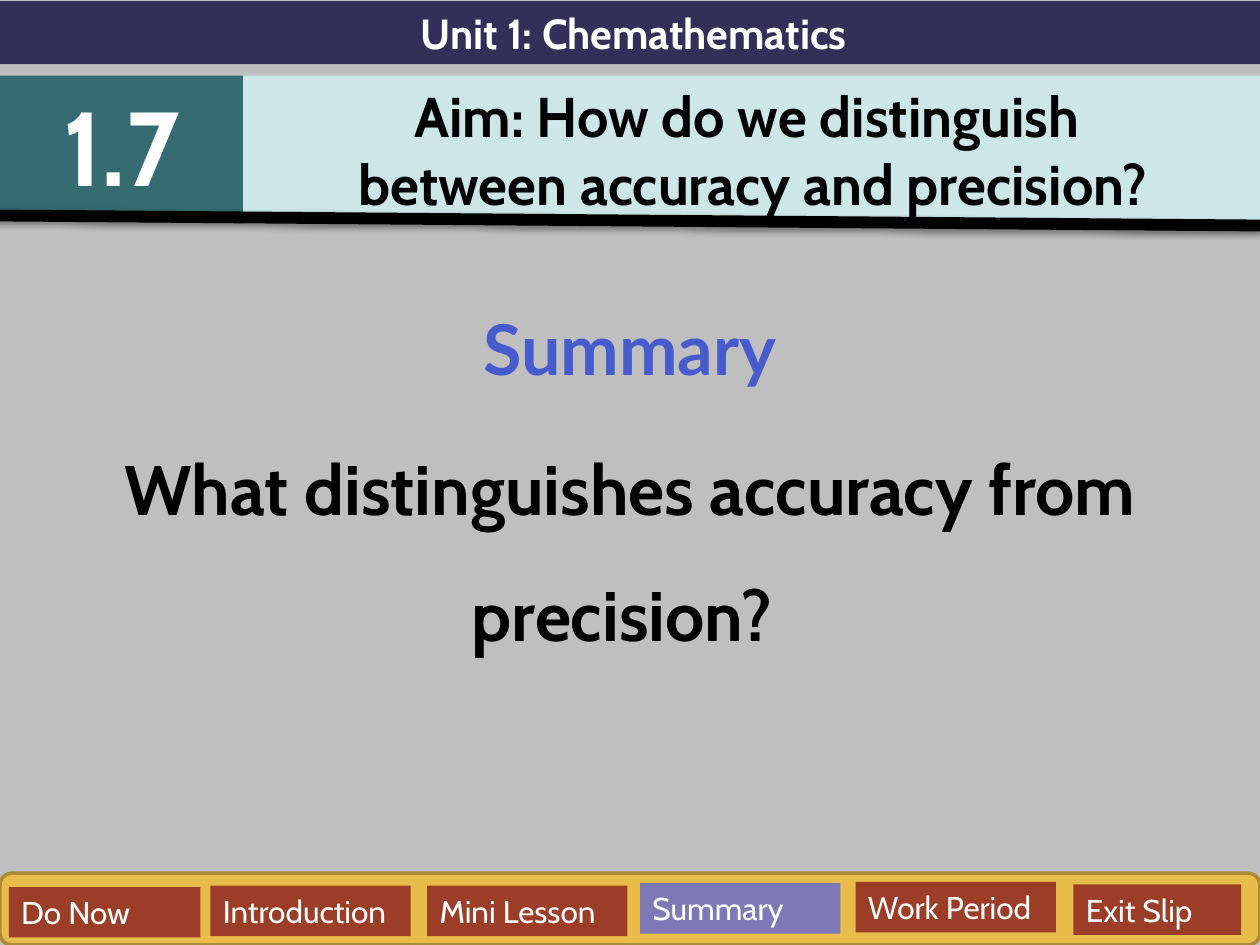
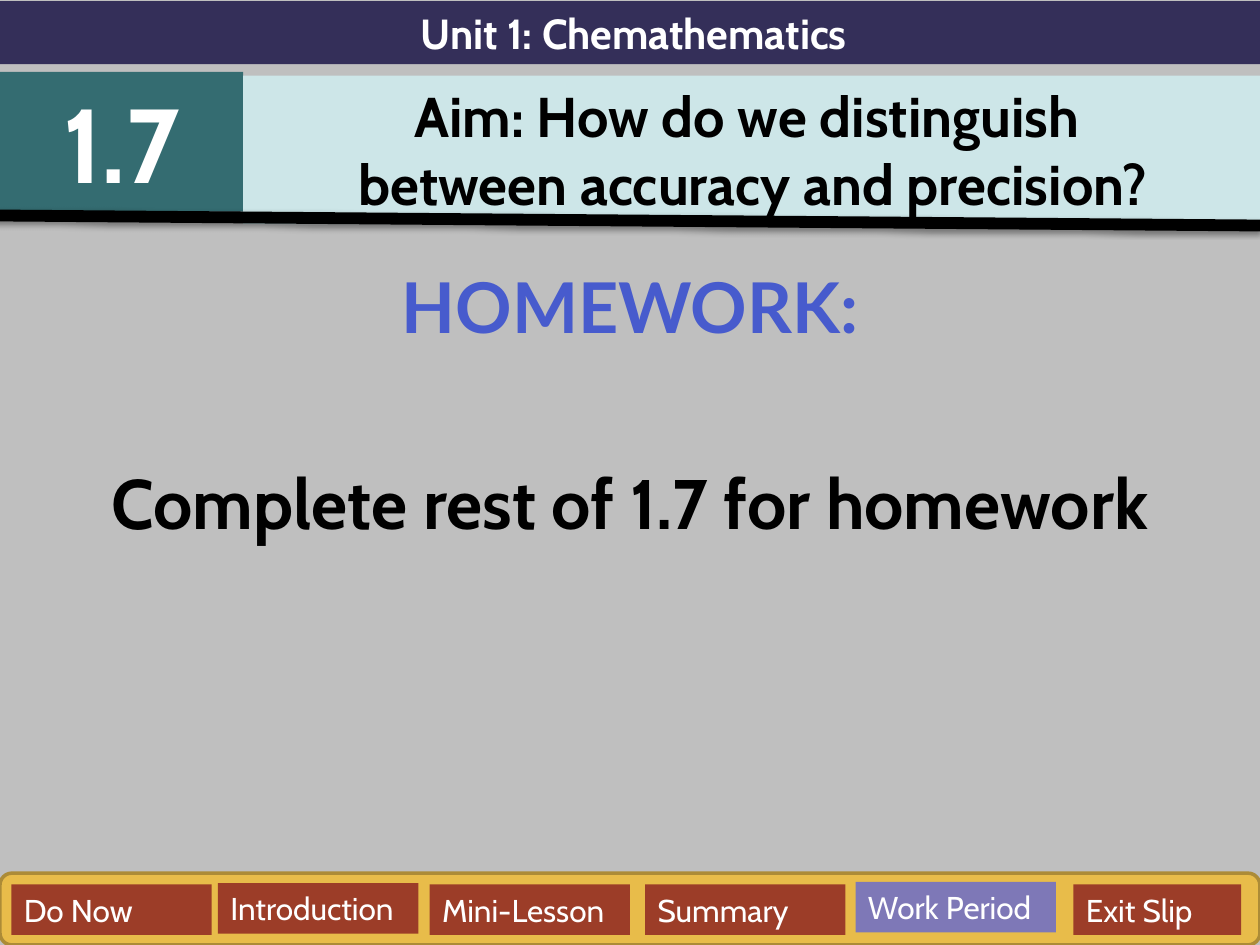
import pptx
import pptx.dml.color
import pptx.enum.shapes
import pptx.enum.text
import pptx.oxml
import pptx.oxml.ns
import pptx.util
from pptx.util import Inches

SHAPE = pptx.enum.shapes.MSO_SHAPE
ALIGN = pptx.enum.text.PP_ALIGN
COLORS = dict(page="BFBFBF", unit="342F59", lesson="346C71", aim="CDE6E8",
              bar="E8BC4A", edge="AC8B37", tab="9C3D28", now="7E78B7",
              head="475BCD", white="FFFFFF", black="000000")

UNIT = dict(name="Cabin", size=24, bold=True, color="white")
LESSON = UNIT | dict(size=60)
AIM = UNIT | dict(size=32, color="black")
TAB = UNIT | dict(size=18, bold=False)
HEAD = dict(name="Lato", size=40, bold=True, color="head")
BODY = HEAD | dict(name="Cabin", color="black")

SHADOW = """<a:effectLst xmlns:a="http://schemas.openxmlformats.org/drawingml/2006/main">
<a:outerShdw blurRad="39370" dist="20320" dir="5400000" rotWithShape="0">
<a:srgbClr val="000000"><a:alpha val="38000"/></a:srgbClr>
</a:outerShdw></a:effectLst>"""


def color(key):
    return pptx.dml.color.RGBColor.from_string(COLORS[key])


def paint(fill, key):
    fill.solid()
    fill.fore_color.rgb = color(key)


def write(frame, lines, style, align=ALIGN.CENTER, **spacing):
    """Add the lines as paragraphs, reusing the first one while it is empty."""
    for line in lines:
        para = frame.paragraphs[0] if not frame.text else frame.add_paragraph()
        para.alignment = align
        for key, value in spacing.items():
            setattr(para, key, value)
        run = para.add_run()
        run.text = line
        for key, value in style.items():
            if key == "color":
                run.font.color.rgb = color(value)
            else:
                setattr(run.font, key, pptx.util.Pt(value) if key == "size" else value)


def block(slide, box, fill, lines=(), style=None, align=ALIGN.CENTER, kind=SHAPE.RECTANGLE):
    shape = slide.shapes.add_shape(kind, *map(Inches, box))
    shape.shadow.inherit = False
    paint(shape.fill, fill)
    shape.line.fill.background()
    frame = shape.text_frame
    frame.word_wrap = True
    frame.vertical_anchor = pptx.enum.text.MSO_ANCHOR.TOP
    write(frame, lines, style, align)
    return shape


def rule(slide):
    line = slide.shapes.add_connector(
        pptx.enum.shapes.MSO_CONNECTOR.STRAIGHT, *map(Inches, (-0.05, 1.71, 10, 1.79)))
    line.line.width = pptx.util.Pt(6.75)
    line.line.color.rgb = color("black")
    props = line._element.find(pptx.oxml.ns.qn("p:spPr"))
    props.append(pptx.oxml.parse_xml(SHADOW))


def header(slide, top):
    block(slide, (0, 0.01, 10.06, 0.5), "unit", ["Unit 1: Chemathematics"], UNIT)
    block(slide, (0, top, 1.93, 1.11), "lesson", ["1.7"], LESSON)
    block(slide, (1.93, 0.6, 8.1, 1.18), "aim",
          ["Aim: How do we distinguish ", "between accuracy and precision?"], AIM)
    rule(slide)


def menu(slide, tabs, now):
    bar = block(slide, (0, 6.93, 10, 0.57), "bar", kind=SHAPE.ROUNDED_RECTANGLE)
    bar.line.color.rgb = color("edge")
    bar.line.width = pptx.util.Pt(2)
    for label, left, top, width in tabs:
        block(slide, (left, top, width, 0.4), "now" if label == now else "tab",
              [label], TAB, ALIGN.LEFT)


def content(slide, head, body, gap, pitch):
    box = slide.shapes.add_textbox(*map(Inches, (0, 2.04, 10, 4.8)))
    frame = box.text_frame
    frame.word_wrap = True
    write(frame, [head], HEAD, line_spacing=pitch, space_before=pptx.util.Pt(8))
    write(frame, [body], BODY, line_spacing=pitch, space_before=pptx.util.Pt(gap))


def main():
    deck = pptx.Presentation()
    deck.slide_width, deck.slide_height = Inches(10), Inches(7.5)
    ends = [("Work Period", 6.79, 7, 1.59), ("Exit Slip", 8.52, 7.02, 1.33)]
    pages = [
        dict(top=0.6, now="Summary", head="Summary", gap=8, pitch=1.5,
             body="What distinguishes accuracy from precision? ",
             tabs=[("Do Now", 0.07, 7.04, 1.52), ("Introduction", 1.67, 7.03, 1.59),
                   ("Mini Lesson", 3.39, 7.03, 1.59), ("Summary", 5.08, 7.01, 1.59)]),
        dict(top=0.57, now="Work Period", head="HOMEWORK:", gap=64, pitch=1.0,
             body="Complete rest of 1.7 for homework",
             tabs=[("Do Now", 0.09, 7.02, 1.59), ("Introduction", 1.73, 7.01, 1.59),
                   ("Mini-Lesson", 3.41, 7.02, 1.59), ("Summary", 5.12, 7.02, 1.59)]),
    ]
    for page in pages:
        slide = deck.slides.add_slide(deck.slide_layouts[6])
        paint(slide.background.fill, "page")
        content(slide, page["head"], page["body"], page["gap"], page["pitch"])
        header(slide, page["top"])
        menu(slide, page["tabs"] + ends, page["now"])
    deck.save("out.pptx")


if __name__ == "__main__":
    main()
